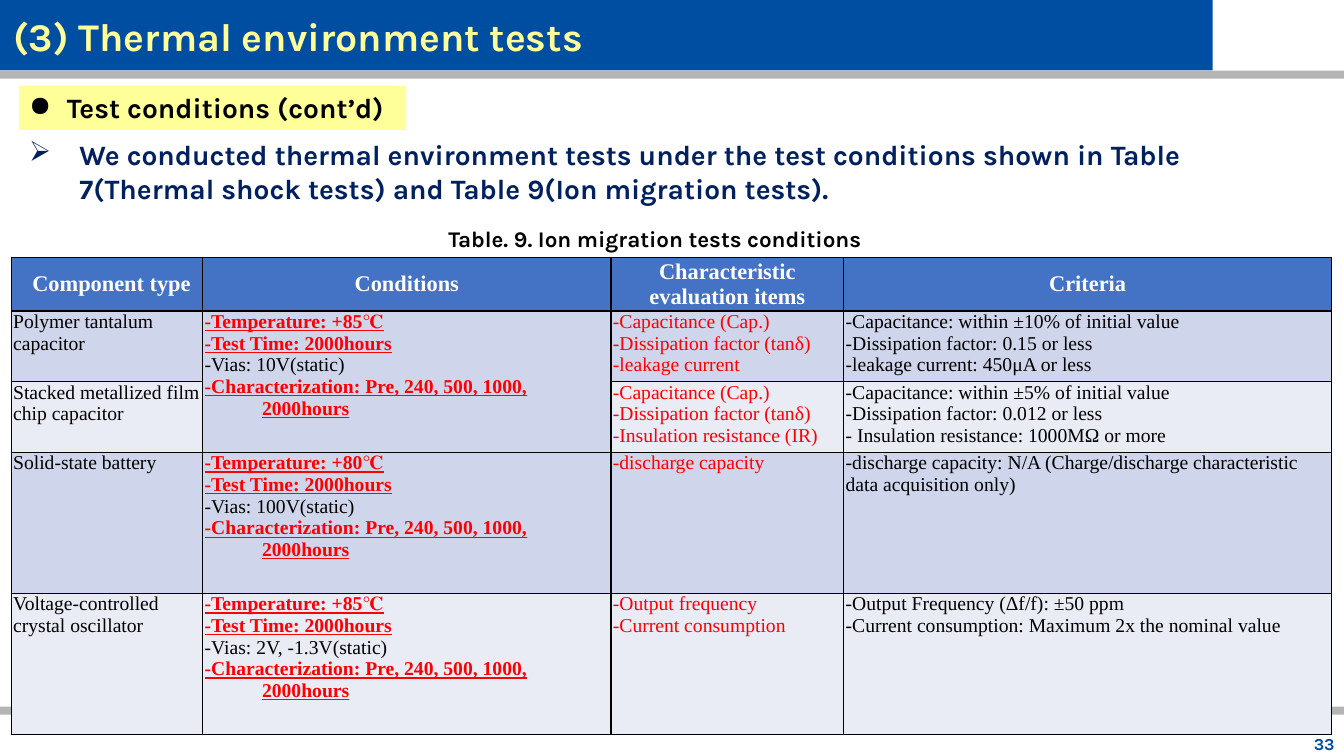
from lxml import etree
from pptx import Presentation
from pptx import util as u
from pptx.dml.color import RGBColor
from pptx.enum import shapes, text
from pptx.oxml import ns

NAVY = RGBColor(0x00, 0x20, 0x60)
BLUE = RGBColor(0x00, 0x4E, 0xA2)
GREY = RGBColor(0xB5, 0xB5, 0xB5)
YELLOW = RGBColor(0xFF, 0xFF, 0x99)
WHITE = RGBColor(0xFF, 0xFF, 0xFF)
BLACK = RGBColor(0x00, 0x00, 0x00)
RED = RGBColor(0xFF, 0x00, 0x00)
HEADER = RGBColor(0x44, 0x72, 0xC4)
BANDS = [RGBColor(0xCF, 0xD5, 0xEA), RGBColor(0xE9, 0xEB, 0xF5)]


def add_run(para, words, font, size, color, bold, underline=False):
    span = para.add_run()
    span.text = words
    span.font.name = font
    span.font.size = u.Pt(size)
    span.font.color.rgb = color
    span.font.bold = bold
    span.font.underline = underline


def set_indent(para, left, first, bullet=None):
    props = para._p.get_or_add_pPr()
    props.set("marL", str(u.Pt(left)))
    props.set("indent", str(u.Pt(first)))
    if bullet:
        etree.SubElement(props, ns.qn("a:buChar")).set("char", bullet)


deck = Presentation()
deck.slide_width, deck.slide_height = u.Pt(960), u.Pt(540)
page = deck.slides.add_slide(deck.slide_layouts[5])

# Title band and grey rules
for top, width, height, color in [(0, 866.2, 50.4, BLUE), (50.4, 960, 5.8, GREY),
                                  (504.7, 960, 5.8, GREY)]:
    bar = page.shapes.add_shape(shapes.MSO_SHAPE.RECTANGLE, 0, u.Pt(top),
                                u.Pt(width), u.Pt(height))
    bar.shadow.inherit = False
    bar.fill.solid()
    bar.fill.fore_color.rgb = color
    bar.line.fill.background()

# Title, brought in front of the band
title = page.shapes.title
page.shapes._spTree.append(title._element)
title.left, title.top, title.width, title.height = u.Pt(2.2), u.Pt(9.4), u.Pt(864), u.Pt(31.7)
title.text_frame.vertical_anchor = text.MSO_ANCHOR.MIDDLE
title.text_frame.auto_size = text.MSO_AUTO_SIZE.NONE
para = title.text_frame.paragraphs[0]
para.alignment = text.PP_ALIGN.LEFT
add_run(para, "(3) Thermal environment tests", "Karla", 28, YELLOW, True)

# Heading, statement, caption and page number:
# place, fill, indent, bullet, size, colour, words
notes = [
    ((13.7, 61.2, 276.5, 31.7), YELLOW, 27, "●", 20, BLACK, "Test conditions (cont’d)"),
    ((13.7, 95, 920, 55.4), None, 36, "➢", 20, NAVY,
     "We conducted thermal environment tests under the test conditions shown in Table "
     "7(Thermal shock tests) and Table 9(Ion migration tests)."),
    ((313.2, 157, 333.4, 26.6), WHITE, 0, None, 16, BLACK,
     "Table. 9. Ion migration tests conditions"),
    ((928, 524.2, 32.4, 14.4), None, 0, None, 12, BLUE, "33"),
]
for place, fill, indent, bullet, size, color, words in notes:
    box = page.shapes.add_textbox(*map(u.Pt, place))
    box.text_frame.word_wrap = True
    if fill is not None:
        box.fill.solid()
        box.fill.fore_color.rgb = fill
    para = box.text_frame.paragraphs[0]
    set_indent(para, indent, -indent, bullet)
    add_run(para, words, "Karla", size, color, True)
# The page number is the last box
box.text_frame.vertical_anchor = text.MSO_ANCHOR.MIDDLE
para.alignment = text.PP_ALIGN.RIGHT

# Table contents: component, (temperature, bias), items, criteria
headings = ["Component type", "Conditions", "Characteristic evaluation items", "Criteria"]
tests = [
    ("Polymer tantalum capacitor", ("+85℃", "10V(static)"),
     ["-Capacitance (Cap.)", "-Dissipation factor (tanδ)", "-leakage current"],
     ["-Capacitance: within ±10% of initial value", "-Dissipation factor: 0.15 or less",
      "-leakage current: 450μA or less"]),
    ("Stacked metallized film chip capacitor", None,
     ["-Capacitance (Cap.)", "-Dissipation factor (tanδ)", "-Insulation resistance (IR)"],
     ["-Capacitance: within ±5% of initial value", "-Dissipation factor: 0.012 or less",
      "- Insulation resistance: 1000MΩ or more"]),
    ("Solid-state battery", ("+80℃", "100V(static)"),
     ["-discharge capacity"],
     ["-discharge capacity: N/A (Charge/discharge characteristic data acquisition only)"]),
    ("Voltage-controlled crystal oscillator", ("+85℃", "2V, -1.3V(static)"),
     ["-Output frequency", "-Current consumption"],
     ["-Output Frequency (Δf/f): ±50 ppm",
      "-Current consumption: Maximum 2x the nominal value"]),
]
widths = [136.8, 291.6, 166.3, 348.5]
heights = [38.4, 50.4, 50.4, 100.7, 100.7]
table = page.shapes.add_table(len(heights), len(widths), u.Pt(8), u.Pt(183.8),
                              u.Pt(sum(widths)), u.Pt(sum(heights))).table
for column, width in zip(table.columns, widths):
    column.width = u.Pt(width)
for row, height in zip(table.rows, heights):
    row.height = u.Pt(height)
table.cell(1, 1).merge(table.cell(2, 1))

# Cell margins, borders and fills
for r, row in enumerate(table.rows):
    for cell in row.cells:
        cell.margin_left = cell.margin_right = u.Pt(1.4)
        cell.margin_top = cell.margin_bottom = 0
        props = cell._tc.get_or_add_tcPr()
        for side in ("a:lnL", "a:lnR", "a:lnT", "a:lnB"):
            line = etree.SubElement(props, ns.qn(side), w=str(u.Pt(1)))
            paint = etree.SubElement(line, ns.qn("a:solidFill"))
            etree.SubElement(paint, ns.qn("a:srgbClr"), val=str(BLACK))
        cell.fill.solid()
        cell.fill.fore_color.rgb = BANDS[(r - 1) % 2] if r else HEADER

# Header row
for c, heading in enumerate(headings):
    cell = table.cell(0, c)
    cell.vertical_anchor = text.MSO_ANCHOR.MIDDLE
    para = cell.text_frame.paragraphs[0]
    para.alignment = text.PP_ALIGN.CENTER
    if c == 0:
        set_indent(para, 6.5, 0)
    add_run(para, heading, "Times New Roman", 16, WHITE, True)

# Body rows: each line is words, colour, emphasis, hanging indent
for r, (component, condition, items, criteria) in enumerate(tests, 1):
    columns = {0: [(component, BLACK, False, 0)],
               2: [(item, RED, False, 0) for item in items],
               3: [(limit, BLACK, False, 0) for limit in criteria]}
    if condition:
        temperature, bias = condition
        columns[1] = [("-Temperature: " + temperature, RED, True, 0),
                      ("-Test Time: 2000hours", RED, True, 0),
                      ("-Vias: " + bias, BLACK, False, 0),
                      ("-Characterization: Pre, 240, 500, 1000, 2000hours", RED, True, 41)]
    for c, lines in columns.items():
        frame = table.cell(r, c).text_frame
        for n, (words, color, strong, hanging) in enumerate(lines):
            para = frame.add_paragraph() if n else frame.paragraphs[0]
            set_indent(para, hanging, -hanging)
            add_run(para, words, "Times New Roman", 14, color, strong, strong)

deck.save("out.pptx")
